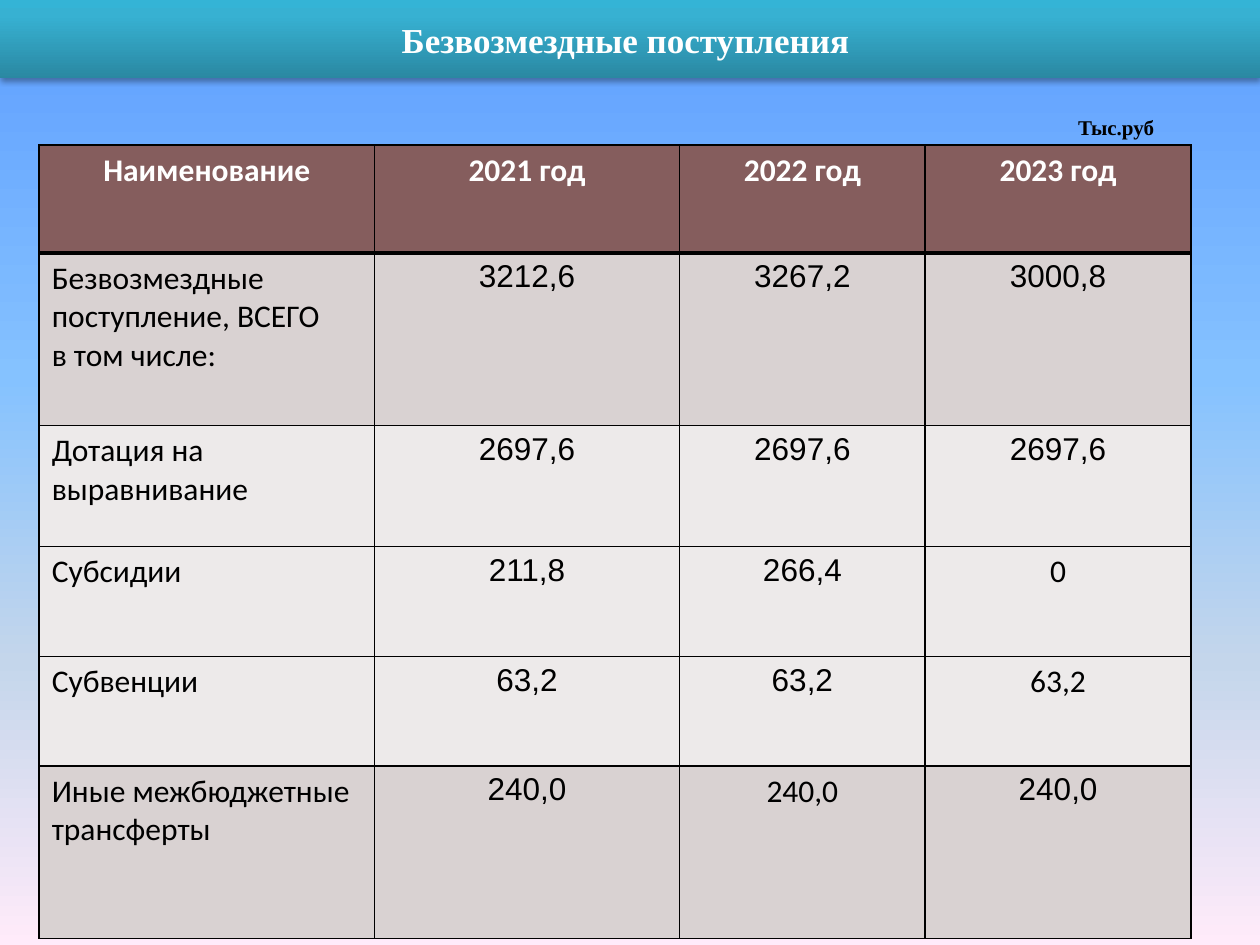
import copy

import pptx
import pptx.dml.color
import pptx.enum.shapes
import pptx.enum.text
import pptx.oxml
import pptx.oxml.ns
import pptx.util
from pptx.util import Cm

THEME = {
    "sky": [(0, "5E9EFF"), (0.4, "85C2FF"), (0.7, "C4D6EB"), (1, "FFEBFA")],
    "teal": [(0, "2A88A2"), (0.8, "37B1D2"), (1, "34B4D6")],
    "header": "855D5D",
    "total": "D9D2D2",
    "detail": "EDEAEA",
    "line": "000000",
    "title_font": {"name": "Times New Roman", "size": 20, "bold": True, "color": "FFFFFF"},
    "unit_font": {"name": "Times New Roman", "size": 12, "bold": True, "color": "000000"},
    "header_font": {"name": "Calibri", "size": 18, "bold": True, "color": "FFFFFF"},
    "label_font": {"name": "Calibri", "size": 18, "bold": False, "color": "000000"},
    "value_font": {"name": "Arial", "size": 18, "bold": False, "color": "000000"},
}
CENTER = pptx.enum.text.PP_ALIGN.CENTER
LEFT = pptx.enum.text.PP_ALIGN.LEFT


def write(frame, text, style, align):
    """Fill a text frame, one paragraph per line of text."""
    frame.text = text
    for paragraph in frame.paragraphs:
        paragraph.alignment = align
        font = paragraph.runs[0].font
        for key, value in style.items():
            if key == "color":
                font.color.rgb = pptx.dml.color.RGBColor.from_string(value)
            else:
                setattr(font, key, pptx.util.Pt(value) if key == "size" else value)


def paint_gradient(fill, parent, stops, angle):
    """Apply a linear gradient with any number of stops."""
    fill.gradient()
    fill.gradient_angle = angle
    stop_list = parent.find(".//" + pptx.oxml.ns.qn("a:gsLst"))
    for _ in stops[2:]:
        stop_list.append(copy.deepcopy(stop_list[0]))
    for stop, (position, color) in zip(fill.gradient_stops, stops):
        stop.position = position
        stop.color.rgb = pptx.dml.color.RGBColor.from_string(color)


presentation = pptx.Presentation()
presentation.slide_width = Cm(25.4)
presentation.slide_height = Cm(19.05)
slide = presentation.slides.add_slide(presentation.slide_layouts[6])

# Background
paint_gradient(slide.background.fill, slide.element, THEME["sky"], 270)

# Title band with a soft shadow below
title = slide.shapes.add_shape(
    pptx.enum.shapes.MSO_SHAPE.RECTANGLE, 0, 0, presentation.slide_width, Cm(1.58))
paint_gradient(title.fill, title.element.spPr, THEME["teal"], 90)
title.line.fill.background()
title.shadow.inherit = False
title.element.spPr.find(pptx.oxml.ns.qn("a:effectLst")).append(pptx.oxml.parse_xml(
    f'<a:outerShdw {pptx.oxml.ns.nsdecls("a")} blurRad="39370" dist="22860" dir="5400000" '
    f'rotWithShape="0"><a:srgbClr val="{THEME["line"]}"><a:alpha val="35000"/></a:srgbClr>'
    '</a:outerShdw>'))
title.text_frame.vertical_anchor = pptx.enum.text.MSO_ANCHOR.MIDDLE
write(title.text_frame, "Безвозмездные поступления ", THEME["title_font"], CENTER)

# Unit of measure
unit = slide.shapes.add_textbox(Cm(20.62), Cm(2.18), Cm(3.76), Cm(0.77))
unit.text_frame.word_wrap = True
write(unit.text_frame, "Тыс.руб", THEME["unit_font"], CENTER)

# Table of receipts: row height in cm, fill, texts
receipts = [
    (2.18, "header", ["Наименование", "2021 год", "2022 год", "2023 год"]),
    (3.48, "total", ["Безвозмездные поступление, ВСЕГО\nв том числе:",
                     "3212,6", "3267,2", "3000,8"]),
    (2.44, "detail", ["Дотация на выравнивание", "2697,6", "2697,6", "2697,6"]),
    (2.21, "detail", ["Субсидии", "211,8", "266,4", "0"]),
    (2.21, "detail", ["Субвенции", "63,2", "63,2", "63,2"]),
    (3.48, "total", ["Иные межбюджетные трансферты", "240,0", "240,0", "240,0"]),
]
column_widths = [6.76, 6.15, 4.95, 5.36]
calibri_values = {(3, 3), (4, 3), (5, 2)}

table = slide.shapes.add_table(
    len(receipts), len(column_widths), Cm(0.79), Cm(2.92),
    Cm(sum(column_widths)), Cm(sum(height for height, _, _ in receipts))).table
for column, width in zip(table.columns, column_widths):
    column.width = Cm(width)

for row_index, (height, band, texts) in enumerate(receipts):
    table.rows[row_index].height = Cm(height)
    for column_index, text in enumerate(texts):
        cell = table.cell(row_index, column_index)
        if row_index == 0:
            style = THEME["header_font"]
        elif column_index == 0 or (row_index, column_index) in calibri_values:
            style = THEME["label_font"]
        else:
            style = THEME["value_font"]
        align = LEFT if row_index and column_index == 0 else CENTER
        write(cell.text_frame, text, style, align)

        # Borders come before the fill; the rule under the header is thicker
        borders = {"L": 1, "R": 1, "T": 3 if row_index == 1 else 1,
                   "B": 3 if row_index == 0 else 1}
        properties = cell._tc.get_or_add_tcPr()
        for side, points in borders.items():
            properties.append(pptx.oxml.parse_xml(
                f'<a:ln{side} {pptx.oxml.ns.nsdecls("a")} w="{pptx.util.Pt(points)}"><a:solidFill>'
                f'<a:srgbClr val="{THEME["line"]}"/></a:solidFill></a:ln{side}>'))
        cell.fill.solid()
        cell.fill.fore_color.rgb = pptx.dml.color.RGBColor.from_string(THEME[band])

presentation.save("out.pptx")
